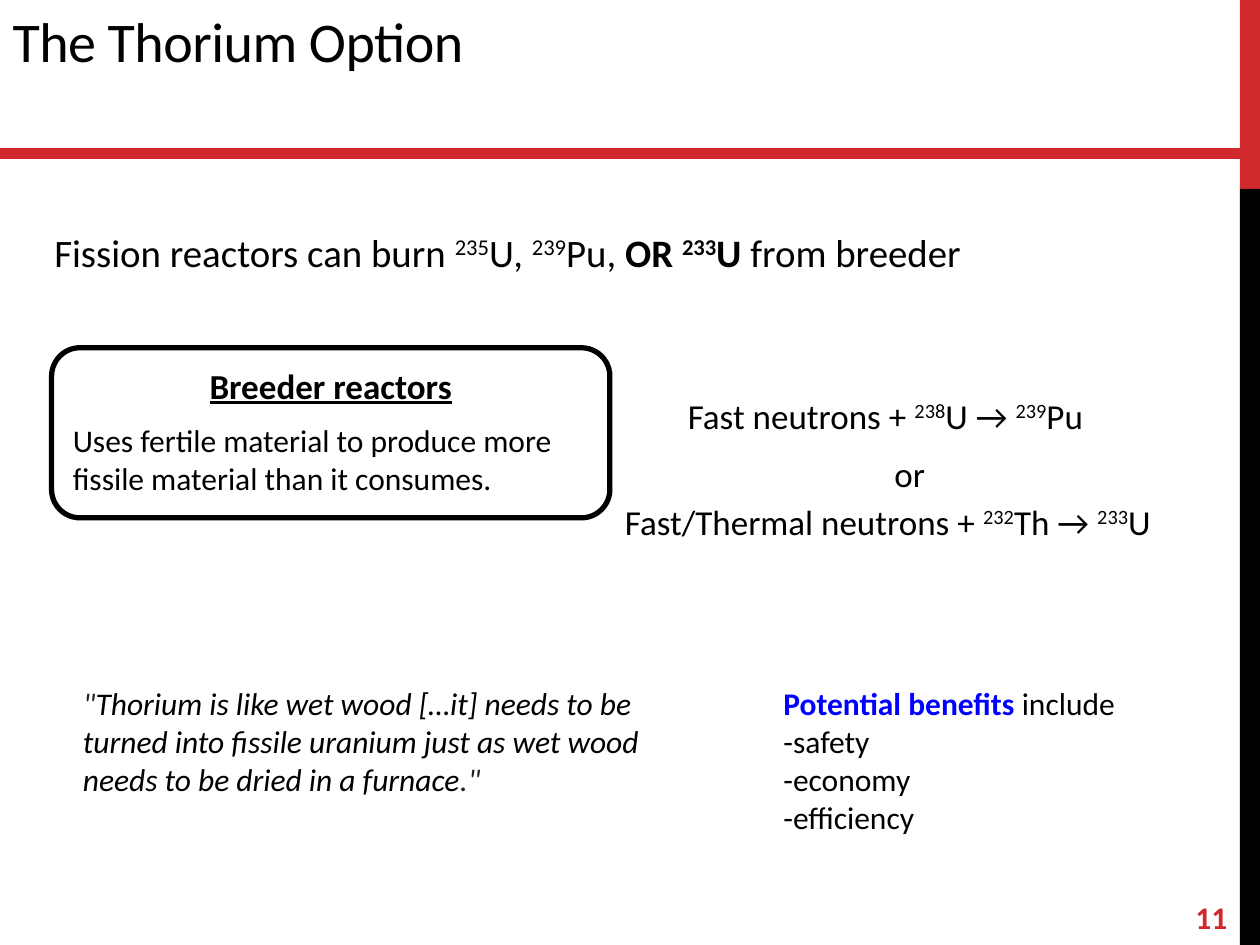
from pptx import Presentation
from pptx.dml.color import RGBColor
from pptx.enum.shapes import MSO_CONNECTOR, MSO_SHAPE
from pptx.enum.text import MSO_ANCHOR, MSO_AUTO_SIZE, PP_ALIGN
from pptx.oxml.ns import qn
from pptx.util import Pt
from lxml import etree

RECT, ROUND_RECT = MSO_SHAPE.RECTANGLE, MSO_SHAPE.ROUNDED_RECTANGLE
STRAIGHT = MSO_CONNECTOR.STRAIGHT
TOP, MIDDLE = MSO_ANCHOR.TOP, MSO_ANCHOR.MIDDLE
LEFT, CENTER, RIGHT = PP_ALIGN.LEFT, PP_ALIGN.CENTER, PP_ALIGN.RIGHT
NO_FIT = MSO_AUTO_SIZE.NONE

FONT = "Calibri"
COLORS = {
    "red": "D1282E",
    "black": "000000",
    "blue": "0000FF",
    "gray": "222222",
}
SLIDE_W, SLIDE_H = 720, 540
BAR_W = 11.5


def color(name):
    return RGBColor.from_string(COLORS[name])


def place(shape, box):
    shape.left, shape.top, shape.width, shape.height = (Pt(v) for v in box)


def add_run(paragraph, text, size, ink="black", bold=False, italic=False,
            underline=False, raised=False):
    run = paragraph.add_run()
    run.text = text
    font = run.font
    font.name, font.size = FONT, Pt(size)
    font.bold, font.italic, font.underline = bold, italic, underline
    font.color.rgb = color(ink)
    if raised:
        run._r.get_or_add_rPr().set("baseline", "30000")
    return run


def write(frame, lines, size, align=LEFT, anchor=TOP):
    frame.word_wrap = True
    frame.auto_size = NO_FIT
    frame.vertical_anchor = anchor
    for index, line in enumerate(lines):
        paragraph = frame.add_paragraph() if index else frame.paragraphs[0]
        paragraph.alignment = align
        for text, style in line:
            add_run(paragraph, text, size, **style)


def add_text(slide, box, lines, size, **layout):
    label = slide.shapes.add_textbox(*(Pt(v) for v in box))
    write(label.text_frame, lines, size, **layout)


def isotopes(*parts, **style):
    return [(text, {**style, "raised": text.isdigit()}) for text in parts]


def add_bar(slide, box, ink):
    bar = slide.shapes.add_shape(RECT, *(Pt(v) for v in box))
    bar.shadow.inherit = False
    bar.fill.solid()
    bar.fill.fore_color.rgb = color(ink)
    bar.line.fill.background()


def add_frame(slide, box, number):
    left, top, width, height = box
    bar_left = left + width - BAR_W
    red_height = height / 5
    add_bar(slide, (bar_left, top, BAR_W, red_height), "red")
    add_bar(slide, (bar_left, top + red_height, BAR_W, height - red_height), "black")
    rule_y = top + 87.84
    rule = slide.shapes.add_connector(
        STRAIGHT, Pt(left), Pt(rule_y), Pt(bar_left + 0.7), Pt(rule_y))
    rule.line.color.rgb = color("red")
    rule.line.width = Pt(6)
    etree.SubElement(rule._element.spPr, qn("a:effectLst"))
    add_text(slide, (bar_left - 103.7, top + height - 30.2, 103.7, 28.8),
             [[(number, {"ink": "red", "bold": True})]], 18,
             align=RIGHT, anchor=MIDDLE)


def add_title(slide, box):
    title = slide.shapes.title
    place(title, box)
    write(title.text_frame, [[("The Thorium Option", {})]], 32)
    for run in title.text_frame.paragraphs[0].runs:
        run._r.get_or_add_rPr().set("spc", "-30")


def add_fuels(slide, box):
    fuels = slide.placeholders[1]
    place(fuels, box)
    paragraph = fuels.text_frame.paragraphs[0]
    properties = paragraph._p.get_or_add_pPr()
    properties.set("marL", "0")
    properties.set("indent", "0")
    etree.SubElement(properties, qn("a:buNone"))
    paragraph.line_spacing = 1.5
    paragraph.space_before = Pt(0)
    sentence = (isotopes("Fission reactors can burn ", "235", "U, ", "239", "Pu, ")
                + isotopes("OR ", "233", "U ", bold=True)
                + isotopes("from breeder"))
    write(fuels.text_frame, [sentence], 22.2)


def add_breeder_card(slide, box):
    left, top, width, height = box
    card = slide.shapes.add_shape(ROUND_RECT, *(Pt(v) for v in box))
    card.shadow.inherit = False
    card.fill.background()
    card.line.color.rgb = color("black")
    card.line.width = Pt(3)
    add_text(slide, (left, top + 5.8, width, 31.7),
             [[("Breeder reactors", {"bold": True, "underline": True})]], 20,
             align=CENTER)
    definition = "Uses fertile material to produce more fissile material than it consumes."
    add_text(slide, (left + 5, top + 38.2, width + 6.4, 51),
             [[(definition, {})]], 18)


def add_reactions(slide, box):
    left, top, width, height = box
    line_height = 31.7
    add_text(slide, (left + 36, top, 270.7, line_height),
             [isotopes("Fast neutrons + ", "238", "U → ", "239", "Pu")], 20)
    add_text(slide, (left + 154, top + 33, 33.5, line_height),
             [isotopes("or")], 20)
    add_text(slide, (left, top + height - line_height, width, line_height),
             [isotopes("Fast/Thermal neutrons + ", "232", "Th → ", "233", "U")], 20)


def add_quote(slide, box):
    saying = ("Thorium is like wet wood […it] needs to be turned into fissile uranium "
              "just as wet wood needs to be dried in a furnace")
    mark = {"ink": "gray", "italic": True}
    add_text(slide, box,
             [[('"', mark), (saying, {"italic": True}), ('."', mark)]], 18)


def add_benefits(slide, box):
    heading = [("Potential benefits ", {"ink": "blue", "bold": True}), ("include", {})]
    benefits = ["-safety", "-economy", "-efficiency"]
    add_text(slide, box, [heading] + [[(name, {})] for name in benefits], 18)


def main():
    deck = Presentation()
    deck.slide_width, deck.slide_height = Pt(SLIDE_W), Pt(SLIDE_H)
    slide = deck.slides.add_slide(deck.slide_layouts[1])
    add_frame(slide, (0, 0, SLIDE_W, SLIDE_H), "11")
    add_title(slide, (0, 0, 528.5, 92.9))
    add_fuels(slide, (23.8, 113.8, 600, 51.8))
    add_breeder_card(slide, (29.5, 198.7, 319, 97.2))
    add_reactions(slide, (350, 221.8, 350, 92.2))
    add_quote(slide, (40.3, 387.4, 360, 72.7))
    add_benefits(slide, (440.6, 387.4, 228.2, 94.3))
    deck.save("out.pptx")


if __name__ == "__main__":
    main()
